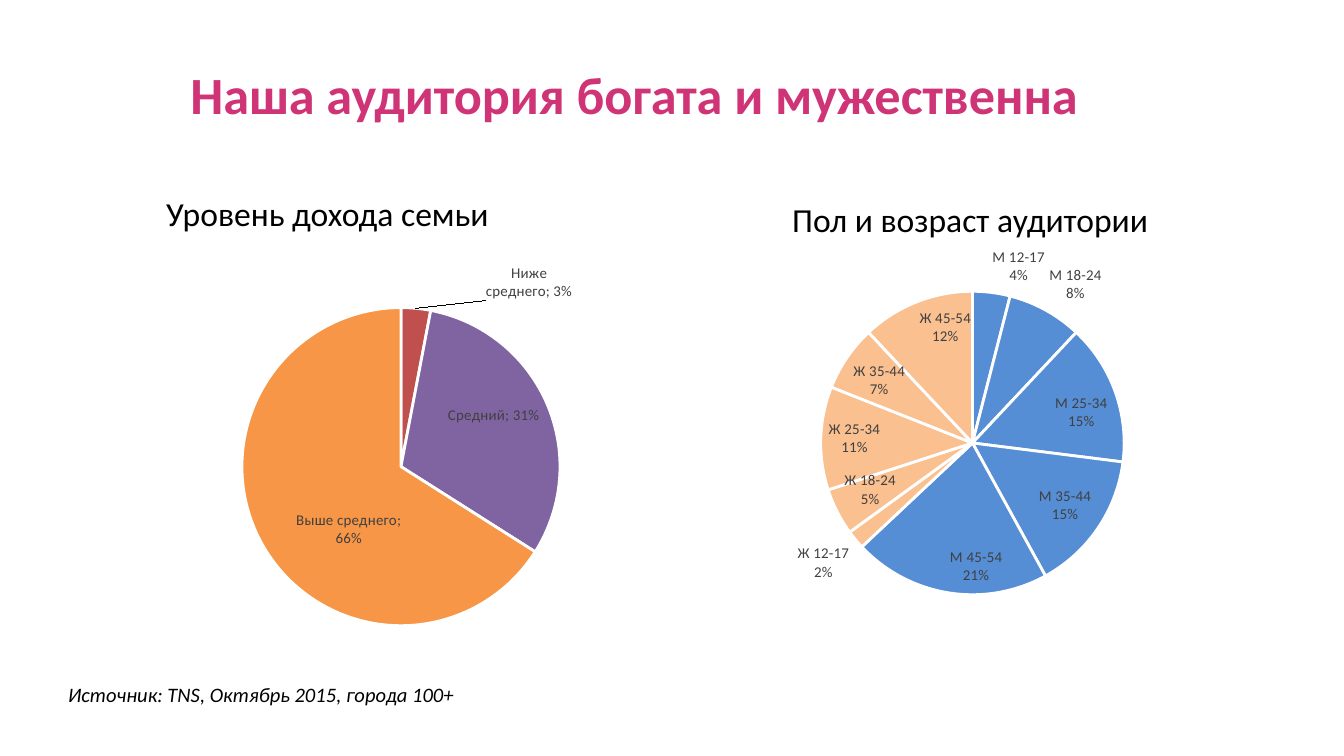
from lxml import etree
from pptx import Presentation
from pptx import util as u
from pptx.chart.data import CategoryChartData
from pptx.dml.color import RGBColor
from pptx.enum import chart as ch, text
from pptx.oxml import parse_xml
from pptx.oxml.ns import nsdecls, qn

PX = 6804  # EMU per px
FONT = "Calibri"
COLORS = {
    "title": "CF3476", "text": "000000", "label": "404040", "edge": "FFFFFF",
    "men": "558ED5", "women": "FAC090",
    "low": "C0504D", "middle": "8064A2", "high": "F79646",
}
TITLE = ("Наша аудитория богата и мужественна", (177, 31, 1099, 126))
TEXTS = [  # wording, box, size, italic
    ("Уровень дохода семьи", (153, 186, 434, 55), 18, False),
    ("Пол и возраст аудитории", (779, 192, 434, 55), 18, False),
    ("Источник: TNS, Октябрь 2015, города 100+", (55, 675, 667, 39), 11, True),
]
INSIDE = ch.XL_LABEL_POSITION.INSIDE_END
OUTSIDE = ch.XL_LABEL_POSITION.OUTSIDE_END
CHARTS = [
    {  # slices: category, value, colour, label position, label shift
        "box": (669, 226, 607, 430), "pie": (823, 289, 305),
        "show": "showPercent", "separator": "\n",
        "slices": [
            ("М 12-17", 4, "men", OUTSIDE, None),
            ("М 18-24", 8, "men", OUTSIDE, None),
            ("М 25-34", 15, "men", INSIDE, None),
            ("М 35-44", 15, "men", INSIDE, None),
            ("М 45-54", 21, "men", INSIDE, None),
            ("Ж 12-17", 2, "women", OUTSIDE, None),
            ("Ж 18-24", 5, "women", INSIDE, None),
            ("Ж 25-34", 11, "women", INSIDE, None),
            ("Ж 35-44", 7, "women", INSIDE, None),
            ("Ж 45-54", 12, "women", INSIDE, None),
        ],
    },
    {
        "box": (140, 226, 462, 430), "pie": (242, 307, 318),
        "show": "showVal", "separator": "; ",
        "slices": [
            ("Ниже среднего", 0.03, "low", OUTSIDE, (70, 0)),
            ("Средний", 0.31, "middle", INSIDE, None),
            ("Выше среднего", 0.66, "high", INSIDE, (30, 10)),
        ],
    },
]


def emu(box):
    return [u.Emu(value * PX) for value in box]


def color(name):
    return RGBColor.from_string(COLORS[name])


def style(font, size, color_name, bold=False, italic=False):
    font.name, font.size = FONT, u.Pt(size)
    font.bold, font.italic = bold, italic
    font.color.rgb = color(color_name)


def manual_layout(inner=False, **fractions):
    """Return a c:layout element with positions as fractions of the chart."""
    parts = '<c:layoutTarget val="inner"/>' if inner else ""
    if inner:
        parts += '<c:xMode val="edge"/><c:yMode val="edge"/>'
    parts += "".join(f'<c:{key} val="{value:.2f}"/>' for key, value in fractions.items())
    return parse_xml(f'<c:layout {nsdecls("c")}><c:manualLayout>{parts}'
                     "</c:manualLayout></c:layout>")


def set_label_content(element, shown, separator):
    for key in ("showVal", "showCatName", "showPercent"):
        element.find(qn(f"c:{key}")).set("val", str(int(key in ("showCatName", shown))))
    node = etree.Element(qn("c:separator"))
    node.text = separator
    element.find(qn("c:showBubbleSize")).addnext(node)


def add_pie(slide, content):
    left, top, width, height = content["box"]
    pie_left, pie_top, diameter = content["pie"]
    slices = content["slices"]
    data = CategoryChartData(number_format="0%" if content["show"] == "showVal" else "0")
    data.categories = [item[0] for item in slices]
    data.add_series("Series 1", [item[1] for item in slices])
    chart = slide.shapes.add_chart(ch.XL_CHART_TYPE.PIE, *emu(content["box"]), data).chart
    chart.has_legend = chart.has_title = False
    style(chart.font, 10, "text")

    plot_area = chart.element.chart.plotArea
    for old in plot_area.findall(qn("c:layout")):
        plot_area.remove(old)
    plot_area.insert(0, manual_layout(
        inner=True, x=(pie_left - left) / width, y=(pie_top - top) / height,
        w=diameter / width, h=diameter / height))

    plot = chart.plots[0]
    plot.vary_by_categories = True
    series = plot.series[0]
    labels = series.data_labels
    labels.number_format, labels.number_format_is_linked = "0%", False
    style(labels.font, 8, "label")
    for index, (_, _, fill, position, _) in enumerate(slices):
        point = series.points[index]
        point.format.fill.solid()
        point.format.fill.fore_color.rgb = color(fill)
        point.format.line.color.rgb = color("edge")
        point.format.line.width = u.Pt(1.5)
        style(point.data_label.font, 8, "label")
        point.data_label.position = position

    set_label_content(chart.element.find(f".//{qn('c:dLbls')}"),
                      content["show"], content["separator"])
    for element, item in zip(chart.element.iter(qn("c:dLbl")), slices):
        set_label_content(element, content["show"], content["separator"])
        if item[4]:
            shift_x, shift_y = item[4]
            element.find(qn("c:idx")).addnext(
                manual_layout(x=shift_x / width, y=shift_y / height))


def add_text(slide, wording, box, size, italic):
    frame = slide.shapes.add_textbox(*emu(box)).text_frame
    frame.word_wrap = True
    run = frame.paragraphs[0].add_run()
    run.text = wording
    style(run.font, size, "text", italic=italic)


def main():
    presentation = Presentation()
    presentation.slide_width, presentation.slide_height = emu((1344, 756))
    slide = presentation.slides.add_slide(presentation.slide_layouts[5])

    wording, box = TITLE
    title = slide.shapes.title
    title.left, title.top, title.width, title.height = emu(box)
    title.text_frame.vertical_anchor = text.MSO_ANCHOR.MIDDLE
    paragraph = title.text_frame.paragraphs[0]
    paragraph.alignment = text.PP_ALIGN.LEFT
    run = paragraph.add_run()
    run.text = wording
    style(run.font, 28, "title", bold=True)

    for content in CHARTS:
        add_pie(slide, content)
    for item in TEXTS:
        add_text(slide, *item)
    presentation.save("out.pptx")


if __name__ == "__main__":
    main()
